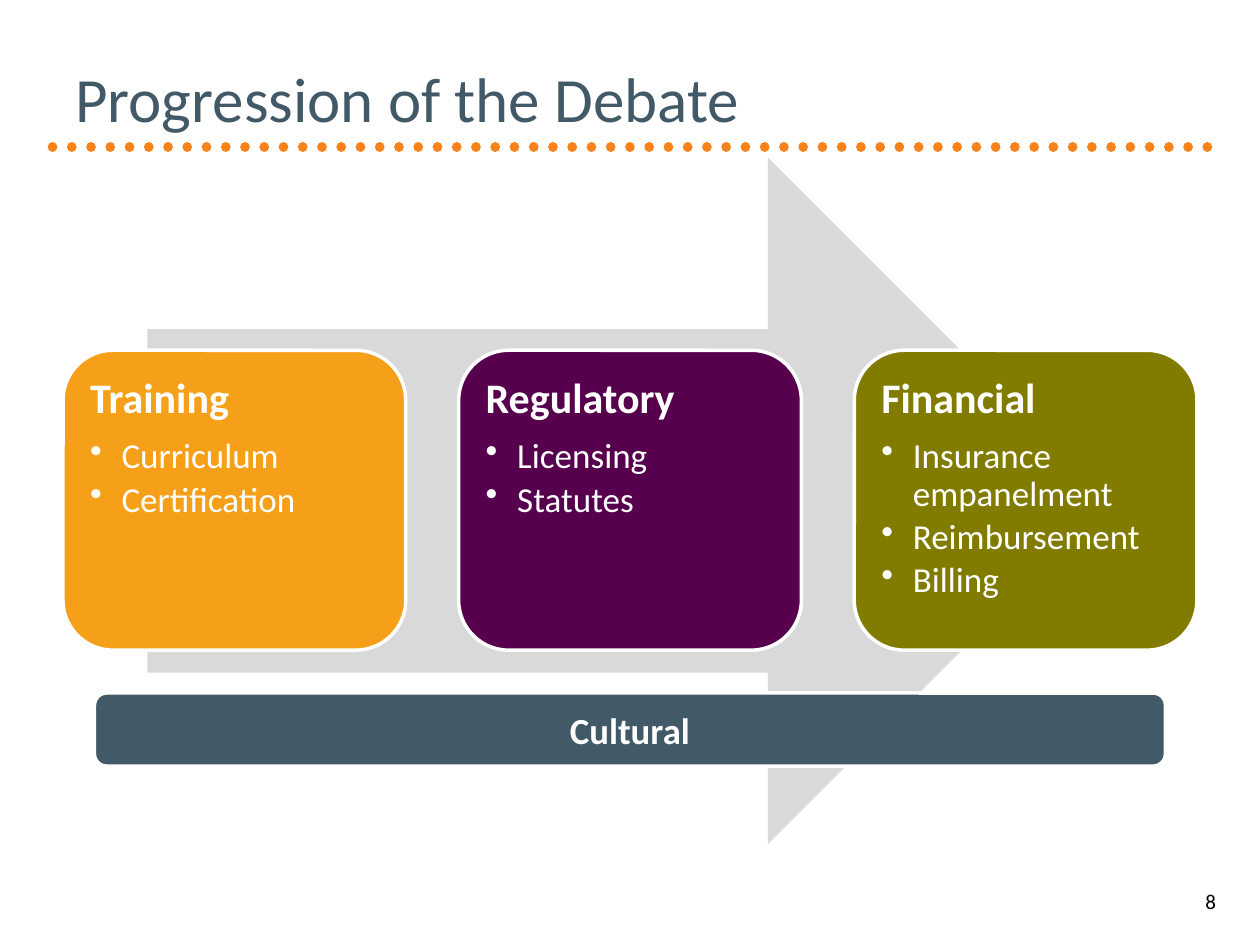
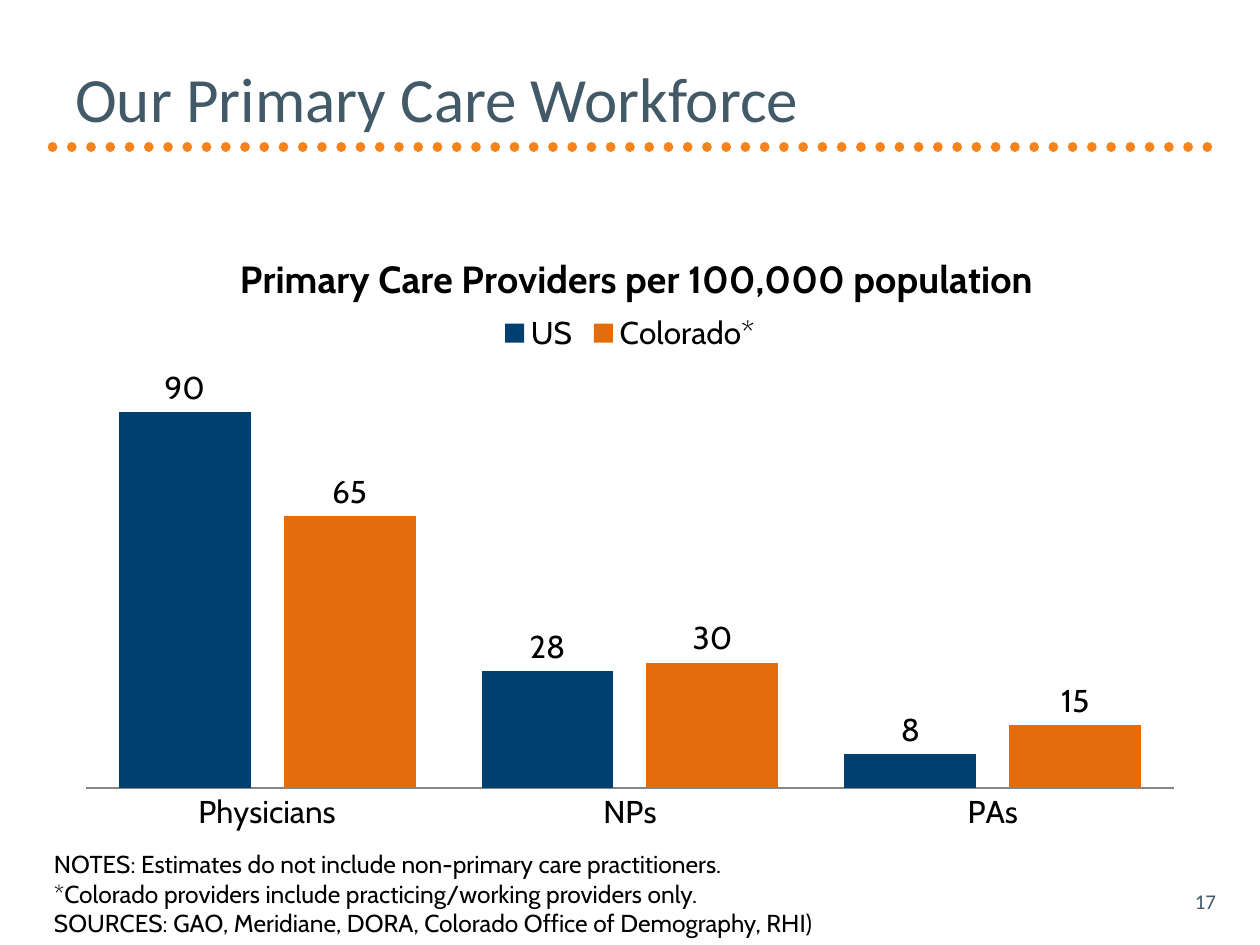
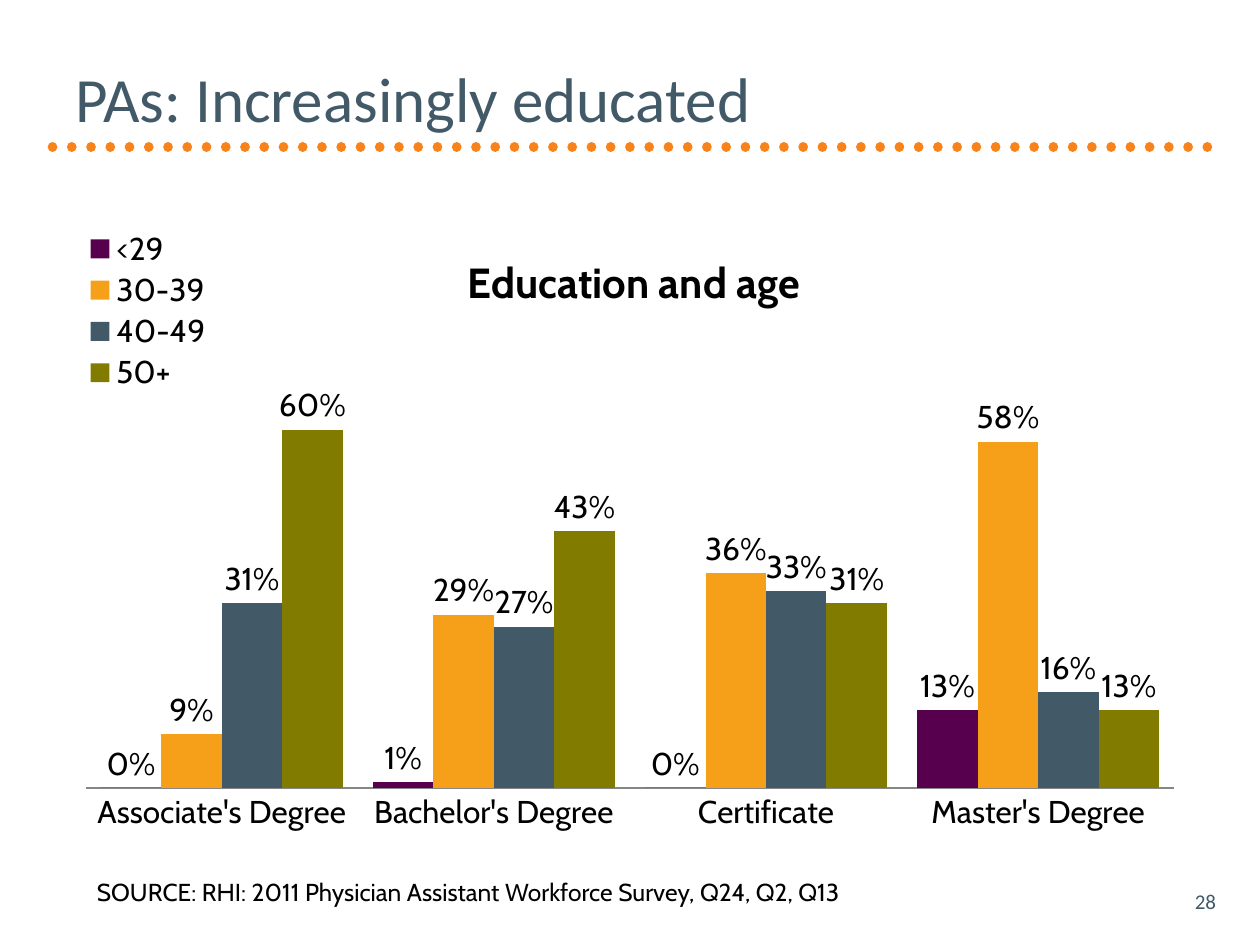
from lxml import etree
from pptx import Presentation
from pptx.chart.data import CategoryChartData
from pptx.dml.color import RGBColor
from pptx.enum import chart as ch, dml, shapes, text
from pptx.oxml.ns import qn
from pptx.util import Pt

COLORS = {
    "white": "FFFFFF", "black": "000000", "slate": "425968", "dots": "F7831A",
    "arrow": "D9D9D9", "amber": "F6A01A", "plum": "56004E", "olive": "817C00",
    "navy": "004070", "orange": "E46C0A", "axis": "868686",
}
ALIGN = text.PP_ALIGN
ANCHOR = text.MSO_ANCHOR


def rgb(name):
    return RGBColor.from_string(COLORS[name])


def place(parent, x, y, w=None, h=None, inner=False):
    """Give a chart part a manual layout, in fractions of the chart."""
    for old in parent.findall(qn("c:layout")):
        parent.remove(old)
    layout = etree.Element(qn("c:layout"))
    manual = etree.SubElement(layout, qn("c:manualLayout"))
    items = [("layoutTarget", "inner")] if inner else []
    items += [("xMode", "edge"), ("yMode", "edge"), ("x", x), ("y", y)]
    if w:
        items += [("w", w), ("h", h)]
    for tag, val in items:
        etree.SubElement(manual, qn("c:" + tag)).set("val", str(val))
    overlay = parent.find(qn("c:overlay"))
    if overlay is None:
        parent.insert(0, layout)
    else:
        overlay.addprevious(layout)


class Deck:
    heading_font = "Calibri"
    chart_font = "Cabin"

    def __init__(self):
        self.prs = Presentation()
        self.prs.slide_width, self.prs.slide_height = Pt(720), Pt(540)
        self.slide = None

    def new_slide(self, title, number, number_color="slate"):
        self.slide = self.prs.slides.add_slide(self.prs.slide_layouts[6])
        self.rule()
        self.text([title], 36, 21.6, 648, 68.4, 36, color="slate", anchor=ANCHOR.MIDDLE)
        self.text([str(number)], 534.24, 500.4, 167.76, 28.8, 12, color=number_color,
                  align=ALIGN.RIGHT, anchor=ANCHOR.MIDDLE)

    def rule(self):
        """Dotted line under the title."""
        sp = self.slide.shapes.add_connector(
            shapes.MSO_CONNECTOR.STRAIGHT, Pt(30), Pt(84), Pt(696), Pt(84))
        sp.line.color.rgb = rgb("dots")
        sp.line.width = Pt(5.5)
        sp.line.dash_style = dml.MSO_LINE.ROUND_DOT
        props = sp.element.spPr
        props.find(qn("a:ln")).set("cap", "rnd")
        etree.SubElement(props, qn("a:effectLst"))

    def style(self, p, size, font, color, bold=False):
        for r in p.runs:
            r.font.size, r.font.name, r.font.bold = Pt(size), font, bold
            r.font.color.rgb = rgb(color)

    def text(self, lines, x, y, w, h, size, font=heading_font, color="black",
             align=ALIGN.LEFT, anchor=ANCHOR.TOP):
        sp = self.slide.shapes.add_textbox(Pt(x), Pt(y), Pt(w), Pt(h))
        tf = sp.text_frame
        tf.word_wrap, tf.vertical_anchor = True, anchor
        tf.text = "\n".join(lines)
        for p in tf.paragraphs:
            p.alignment = align
            self.style(p, size, font, color)
        return tf

    def shape(self, kind, x, y, w, h, fill, outline=None):
        sp = self.slide.shapes.add_shape(kind, Pt(x), Pt(y), Pt(w), Pt(h))
        sp.shadow.inherit = False
        sp.fill.solid()
        sp.fill.fore_color.rgb = rgb(fill)
        if outline:
            sp.line.color.rgb = rgb(outline)
            sp.line.width = Pt(2)
        else:
            sp.line.fill.background()
        return sp

    def card(self, x, y, w, h, fill, heading, bullets):
        self.shape(shapes.MSO_SHAPE.ROUNDED_RECTANGLE, x, y, w, h, fill, "white")
        pad = 8.4
        tf = self.text([heading] + bullets, x + pad, y + pad, w - 2 * pad, h - 2 * pad,
                       20, color="white")
        tf.margin_top = tf.margin_bottom = Pt(7.2)
        head, *items = tf.paragraphs
        self.style(head, 24, self.heading_font, "white", bold=True)
        head.line_spacing, head.space_after = 0.9, Pt(9)
        for p in items:
            p.level, p.line_spacing, p.space_after = 1, 0.9, Pt(3)
            props = p._p.get_or_add_pPr()
            props.set("marL", str(Pt(18)))
            props.set("indent", str(-Pt(18)))
            etree.SubElement(props, qn("a:buChar")).set("char", "•")

    def bar(self, x, y, w, h, fill, label):
        sp = self.shape(shapes.MSO_SHAPE.ROUNDED_RECTANGLE, x, y, w, h, fill, "white")
        tf = sp.text_frame
        tf.text, tf.vertical_anchor = label, ANCHOR.MIDDLE
        p = tf.paragraphs[0]
        p.alignment = ALIGN.CENTER
        self.style(p, 21, self.heading_font, "white", bold=True)

    def columns(self, title, title_size, title_at, cats, series, top, legend_at,
                plot_at, overlap=0, fmt="General"):
        data = CategoryChartData(number_format=fmt)
        data.categories = cats
        for name, vals, _ in series:
            data.add_series(name, vals)
        chart = self.slide.shapes.add_chart(
            ch.XL_CHART_TYPE.COLUMN_CLUSTERED, Pt(36), Pt(126), Pt(648), Pt(356.4), data).chart
        chart.font.size, chart.font.name = Pt(18), self.chart_font
        chart.font.color.rgb = rgb("black")

        # Title and legend
        chart.has_title = True
        tf = chart.chart_title.text_frame
        tf.text = title
        self.style(tf.paragraphs[0], title_size, self.chart_font, "black", bold=True)
        chart.has_legend = True
        chart.legend.position = ch.XL_LEGEND_POSITION.TOP
        chart.legend.include_in_layout = False

        # Axes
        axis = chart.category_axis
        axis.major_tick_mark = ch.XL_TICK_MARK.NONE
        axis.format.line.color.rgb = rgb("axis")
        axis.format.line.width = Pt(0.75)
        values = chart.value_axis
        values.visible = values.has_major_gridlines = False
        values.minimum_scale, values.maximum_scale = 0, top

        # Columns and labels
        plot = chart.plots[0]
        plot.gap_width, plot.overlap, plot.vary_by_categories = 50, overlap, False
        plot.has_data_labels = True
        labels = plot.data_labels
        labels.show_value = True
        labels.number_format, labels.number_format_is_linked = fmt, False
        labels.position = ch.XL_LABEL_POSITION.OUTSIDE_END
        for s, (_, _, color) in zip(plot.series, series):
            s.format.fill.solid()
            s.format.fill.fore_color.rgb = rgb(color)

        # Manual layout of the chart parts
        root = chart.element.find(qn("c:chart"))
        place(root.find(qn("c:title")), *title_at)
        place(root.find(qn("c:legend")), *legend_at)
        place(root.find(qn("c:plotArea")), *plot_at, inner=True)


def main():
    deck = Deck()

    # Progression of the Debate
    deck.new_slide("Progression of the Debate", 8, "black")
    deck.shape(shapes.MSO_SHAPE.RIGHT_ARROW, 84.24, 90, 550.8, 392.4, "arrow")
    stages = [
        ("amber", "Training", ["Curriculum", "Certification"]),
        ("plum", "Regulatory", ["Licensing", "Statutes"]),
        ("olive", "Financial", ["Insurance empanelment", "Reimbursement", "Billing"]),
    ]
    for i, stage in enumerate(stages):
        deck.card(36 + 226.08 * i, 200.16, 195.84, 171.36, *stage)
    deck.bar(54, 396, 612, 41.76, "slate", "Cultural")

    # Primary care workforce
    deck.new_slide("Our Primary Care Workforce", 17)
    deck.columns(
        "Primary Care Providers per 100,000 population", 21.6, (0.15, 0.04),
        ["Physicians", "NPs", "PAs"],
        [("US", [90, 28, 8], "navy"), ("Colorado*", [65, 30, 15], "orange")],
        100, (0.38, 0.15, 0.24, 0.06), (0.02, 0.24, 0.96, 0.67), overlap=-25)
    deck.text(
        ["NOTES: Estimates do not include non-primary care practitioners.",
         "*Colorado providers include practicing/working providers only.",
         "SOURCES: GAO, Meridiane, DORA, Colorado Office of Demography, RHI)"],
        23.76, 481.68, 509.76, 58.32, 14, deck.chart_font)

    # Education of PAs by age
    deck.new_slide("PAs: Increasingly educated", 28)
    deck.columns(
        "Education and age", 24, (0.35, 0.04),
        ["Associate's Degree", "Bachelor's Degree", "Certificate", "Master's Degree"],
        [("<29", [0, 0.01, 0, 0.13], "plum"),
         ("30-39", [0.09, 0.29, 0.36, 0.58], "amber"),
         ("40-49", [0.31, 0.27, 0.33, 0.16], "slate"),
         ("50+", [0.6, 0.43, 0.31, 0.13], "olive")],
        0.7, (0.01, 0.01, 0.13, 0.27), (0.02, 0.24, 0.96, 0.67), fmt="0%")
    deck.text(["SOURCE: RHI: 2011 Physician Assistant Workforce Survey, Q24, Q2, Q13"],
              48.24, 497.52, 581.76, 24.48, 14, deck.chart_font)

    deck.prs.save("out.pptx")


if __name__ == "__main__":
    main()
